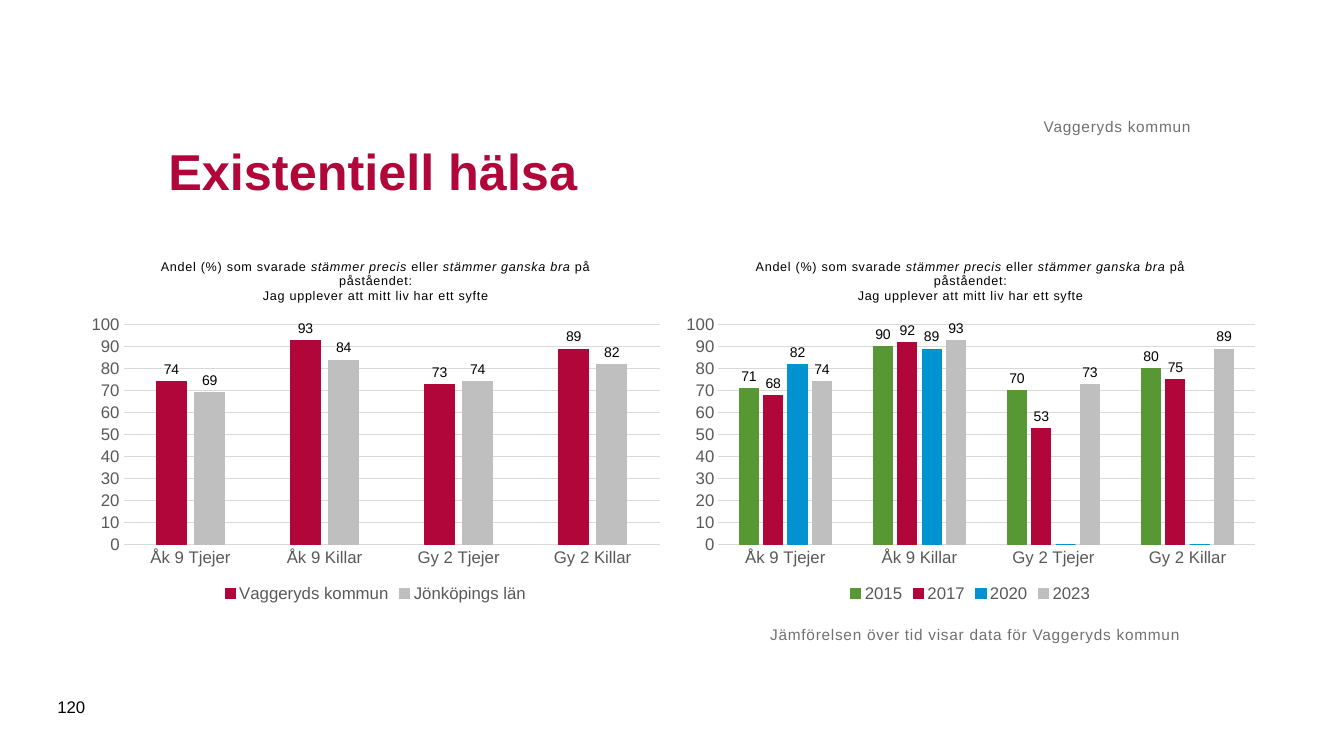
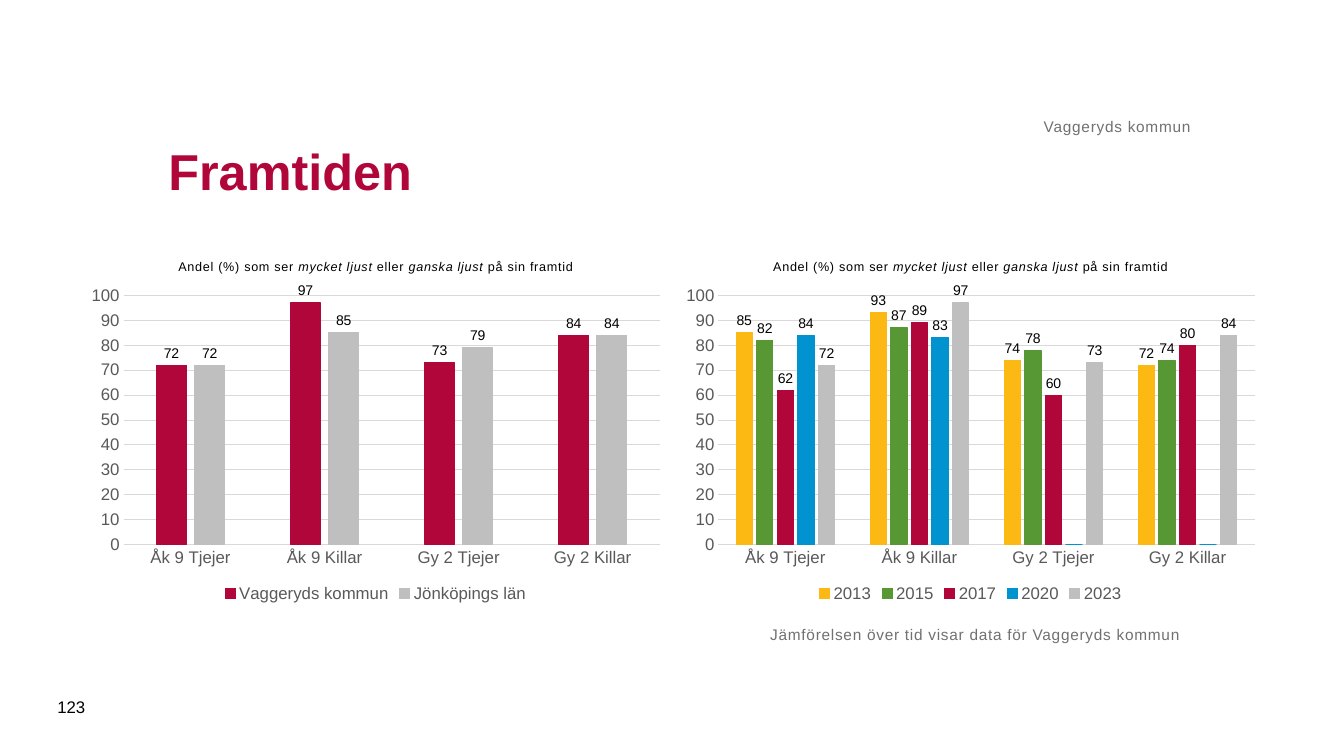
from lxml import etree
from pptx import Presentation
from pptx.chart.data import CategoryChartData as Data
from pptx.dml.color import RGBColor as RGB
from pptx.enum.chart import XL_CHART_TYPE as Kind
from pptx.enum.chart import XL_LABEL_POSITION as Spot
from pptx.enum.chart import XL_LEGEND_POSITION as Side
from pptx.enum.chart import XL_TICK_MARK as Tick
from pptx.enum.text import MSO_ANCHOR as Anchor
from pptx.enum.text import PP_ALIGN as Align
from pptx.oxml import parse_xml
from pptx.oxml.ns import nsdecls, qn
from pptx.util import Inches, Pt

WIDE, HIGH = Inches(13.33), Inches(7.5)
FONT = "Arial"
FORM = "#,##0;#,##0"
TOWN = "Vaggeryds kommun"
GROUPS = ["Åk 9 Tjejer", "Åk 9 Killar", "Gy 2 Tjejer", "Gy 2 Killar"]
HUES = {
    "black": "000000", "note": "717171", "axis": "595959", "grid": "D9D9D9",
    "red": "B1063A", "gray": "BFBFBF", "gold": "FDB913",
    "green": "579835", "blue": "0093D0",
}
TONES = {
    TOWN: "red", "Jönköpings län": "gray", "2013": "gold", "2015": "green",
    "2017": "red", "2020": "blue", "2023": "gray",
}

# Places are left, top, width and height in percent of the slide.
TITLE = (11.78, 13.07, 76.82, 18.93)
LABEL = (11.78, 8.27, 76.82, 9.73)
NOTE = (57.31, 82.67, 39.83, 12.53)
PAGE = (3.53, 90.8, 4.28, 5.33)
CHART = (5.93, 32, 44.04, 48.27)
STEP = 44.26

SLIDES = [
    {
        "head": "Existentiell hälsa", "page": "120",
        "ask": ["Andel (%) som svarade *stämmer precis* eller "
                "*stämmer ganska bra* på påståendet:",
                "Jag upplever att mitt liv har ett syfte"],
        "town": [74, 93, 73, 89], "county": [69, 84, 74, 82],
        "past": {"2015": [71, 90, 70, 80], "2017": [68, 92, 53, 75],
                 "2020": [82, 89, None, None]},
    },
    {
        "head": "Framtiden", "page": "123",
        "ask": ["Andel (%) som ser *mycket ljust* eller *ganska ljust* "
                "på sin framtid"],
        "town": [72, 97, 73, 84], "county": [72, 85, 79, 84],
        "past": {"2013": [85, 93, 74, 72], "2015": [82, 87, 78, 74],
                 "2017": [62, 89, 60, 80], "2020": [84, 83, None, None]},
    },
]


def color(name):
    return RGB.from_string(HUES[name])


def area(left, top, width, height):
    """Turn percentages of the slide into lengths."""
    return (int(WIDE * left / 100), int(HIGH * top / 100),
            int(WIDE * width / 100), int(HIGH * height / 100))


def style(font, size, hue, bold=False):
    font.name, font.size, font.bold = FONT, Pt(size), bold
    font.color.rgb = color(hue)


def write(para, text, size, hue, bold=False, space=0):
    """Add runs to a paragraph; text between asterisks is italic."""
    for i, part in enumerate(text.split("*")):
        if not part:
            continue
        run = para.add_run()
        run.text = part
        style(run.font, size, hue, bold)
        if i % 2:
            run.font.italic = True
        if space:
            run._r.get_or_add_rPr().set("spc", str(space))


def add_text(slide, place, text, size, hue, anchor=Anchor.TOP,
             align=Align.LEFT, inset=True, space=0):
    frame = slide.shapes.add_textbox(*area(*place)).text_frame
    frame.word_wrap = True
    frame.vertical_anchor = anchor
    if not inset:
        frame.margin_left = frame.margin_right = 0
        frame.margin_top = frame.margin_bottom = 0
    para = frame.paragraphs[0]
    para.alignment = align
    write(para, text, size, hue, space=space)


def add_title(slide, text):
    title = slide.shapes.title
    title.left, title.top, title.width, title.height = area(*TITLE)
    title.text_frame.vertical_anchor = Anchor.MIDDLE
    para = title.text_frame.paragraphs[0]
    para.alignment = Align.LEFT
    write(para, text, 36, "red", bold=True)


def set_axes(chart):
    cats, vals = chart.category_axis, chart.value_axis
    for axis in (cats, vals):
        axis.major_tick_mark = axis.minor_tick_mark = Tick.NONE
        style(axis.tick_labels.font, 12, "axis")
    vals.minimum_scale, vals.maximum_scale, vals.major_unit = 0, 100, 10
    vals.tick_labels.number_format = FORM
    vals.tick_labels.number_format_is_linked = False
    vals.has_major_gridlines = True
    vals.format.line.fill.background()
    for line in (cats.format.line, vals.major_gridlines.format.line):
        line.color.rgb = color("grid")
        line.width = Pt(0.75)


def set_bars(series):
    hue = color(TONES[series.name])
    look = series.format
    look.fill.solid()
    look.fill.fore_color.rgb = hue
    look.line.color.rgb = hue
    look.line.width = Pt(0.75)
    labels = series.data_labels
    labels.show_value = True
    labels.position = Spot.OUTSIDE_END
    labels.number_format = FORM
    labels.number_format_is_linked = False
    style(labels.font, 10, "black")
    gaps = [i for i, val in enumerate(series.values) if val is None]
    for spot, i in enumerate(gaps):
        labels._element.insert(spot, parse_xml(
            f'<c:dLbl {nsdecls("c")}><c:idx val="{i}"/>'
            '<c:delete val="1"/></c:dLbl>'))


def blanks_as_zero(chart):
    root = chart._chartSpace.find(qn("c:chart"))
    mode = root.find(qn("c:dispBlanksAs"))
    if mode is None:
        mode = etree.SubElement(root, qn("c:dispBlanksAs"))
    mode.set("val", "zero")


def add_bars(slide, col, ask, rows):
    data = Data(number_format="0")
    data.categories = GROUPS
    for name, vals in rows.items():
        data.add_series(name, vals)
    left, *rest = CHART
    place = area(left + col * STEP, *rest)
    chart = slide.shapes.add_chart(
        Kind.COLUMN_CLUSTERED, *place, data).chart
    style(chart.font, 10, "black")
    chart.has_title = True
    frame = chart.chart_title.text_frame
    for i, text in enumerate(ask):
        para = frame.add_paragraph() if i else frame.paragraphs[0]
        write(para, text, 9, "black", space=50)
    chart.chart_title.include_in_layout = False
    chart.has_legend = True
    chart.legend.position = Side.BOTTOM
    chart.legend.include_in_layout = False
    style(chart.legend.font, 12, "axis")
    set_axes(chart)
    plot = chart.plots[0]
    plot.vary_by_categories = False
    plot.gap_width, plot.overlap = 219, -27
    for series in plot.series:
        set_bars(series)
    blanks_as_zero(chart)


def add_slide(deck, item):
    slide = deck.slides.add_slide(deck.slide_layouts.get_by_name("Title Only"))
    town = item["town"]
    add_bars(slide, 0, item["ask"],
             {TOWN: town, "Jönköpings län": item["county"]})
    add_bars(slide, 1, item["ask"], {**item["past"], "2023": town})
    add_title(slide, item["head"])
    add_text(slide, NOTE, f"Jämförelsen över tid visar data för {TOWN}",
             11, "note", inset=False, space=50)
    add_text(slide, LABEL, TOWN, 11, "note", Anchor.BOTTOM, Align.RIGHT,
             inset=False, space=50)
    add_text(slide, PAGE, item["page"], 12, "black", Anchor.MIDDLE)


def main():
    deck = Presentation()
    deck.slide_width, deck.slide_height = WIDE, HIGH
    for item in SLIDES:
        add_slide(deck, item)
    deck.save("out.pptx")


if __name__ == "__main__":
    main()
